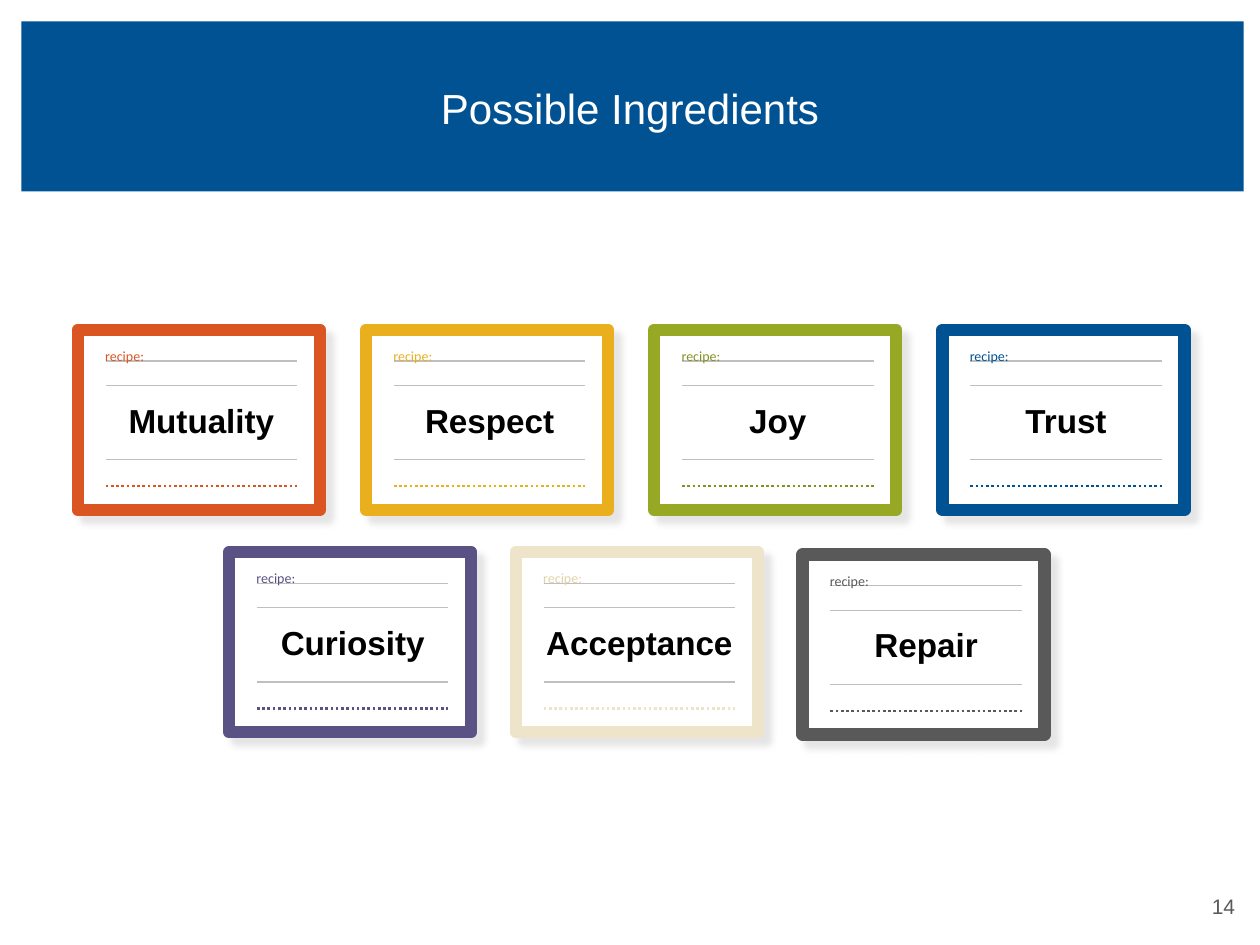
from pptx import Presentation, oxml
from pptx.dml.color import RGBColor
from pptx.enum import dml, shapes, text
from pptx.oxml import ns
from pptx.util import Cm, Pt

HUES = {
    "white": "FFFFFF", "black": "000000", "rule": "BFBFBF",
    "orange": "DA5521", "gold": "E9AF1D", "green": "97A825", "olive": "849120",
    "blue": "005293", "purple": "5A5284", "cream": "EDE4CA", "sand": "E2D3A9",
    "gray": "595959",
}
# Each entry: label, frame, dots, recipe ink, drop below the row.
ROWS = [
    (1.57, 6.65, 5.81, [
        ("Mutuality", "orange", "orange", "orange", 0),
        ("Respect", "gold", "gold", "gold", 0),
        ("Joy", "green", "olive", "olive", 0),
        ("Trust", "blue", "blue", "blue", 0),
    ]),
    (4.62, 11.13, 5.78, [
        ("Curiosity", "purple", "purple", "purple", 0),
        ("Acceptance", "cream", "cream", "sand", 0),
        ("Repair", "gray", "gray", "gray", 0.05),
    ]),
]
CARD_W, CARD_H = 4.88, 3.63
RULE_X, RULE_W = 0.56, 3.86


def hue(name):
    """Return the named colour."""
    return RGBColor.from_string(HUES[name])


def write(shape, words, size, tone, align, face="Arial", bold=False):
    """Set one styled paragraph in a shape."""
    para = shape.text_frame.paragraphs[0]
    para.text = words
    para.alignment = align
    font = para.font
    font.name, font.size, font.bold = face, Pt(size), bold
    font.color.rgb = hue(tone)


def add_box(parts, x, y, w, h, fill):
    """Add a plain filled rectangle."""
    box = parts.add_shape(shapes.MSO_SHAPE.RECTANGLE, Cm(x), Cm(y), Cm(w), Cm(h))
    box.fill.solid()
    box.fill.fore_color.rgb = hue(fill)
    box.line.fill.background()
    box.shadow.inherit = False
    return box


def add_text(parts, x, y, w, h, *style, **extra):
    """Add a wrapping text box."""
    box = parts.add_textbox(Cm(x), Cm(y), Cm(w), Cm(h))
    box.text_frame.word_wrap = True
    write(box, *style, **extra)
    return box


def add_rule(parts, x, y, tone, width=0.75, dash=None):
    """Add a level line across a card."""
    rule = parts.add_connector(
        shapes.MSO_CONNECTOR.STRAIGHT, Cm(x), Cm(y), Cm(x + RULE_W), Cm(y))
    rule.line.color.rgb = hue(tone)
    rule.line.width = Pt(width)
    rule.line.dash_style = dash
    rule._element.spPr.append(oxml.parse_xml(f"<a:effectLst {ns.nsdecls('a')}/>"))


def add_frame(parts, x, y, tone):
    """Add the bordered card with rounded joins and a soft shadow."""
    card = add_box(parts, x, y, CARD_W, CARD_H, "white")
    card.line.color.rgb = hue(tone)
    card.line.width = Pt(7)
    props = card._element.spPr
    props.find(ns.qn("a:ln")).append(oxml.parse_xml(f"<a:round {ns.nsdecls('a')}/>"))
    props.find(ns.qn("a:effectLst")).append(oxml.parse_xml(
        f'<a:outerShdw {ns.nsdecls("a")} blurRad="{Pt(4)}" dist="{Pt(6)}" '
        f'dir="2700000" algn="tl" rotWithShape="0"><a:srgbClr val="{HUES["black"]}">'
        '<a:alpha val="10000"/></a:srgbClr></a:outerShdw>'))


def add_card(parts, x, y, label, frame, dots, ink):
    """Add one recipe card at the given corner."""
    add_frame(parts, x, y, frame)
    group = parts.add_group_shape().shapes
    for drop in (0.63, 1.12, 2.62):
        add_rule(group, x + RULE_X, y + drop, "rule")
    add_rule(group, x + RULE_X, y + 3.15, dots, 1.5, dml.MSO_LINE.ROUND_DOT)
    add_text(group, x + 0.3, y + 0.23, 1.85, 0.61, "recipe:", 8, ink,
             text.PP_ALIGN.LEFT, face="Calibri")
    name = add_box(parts, x + RULE_X, y + 1.28, RULE_W, 1.07, "white")
    name.text_frame.word_wrap = False
    write(name, label, 19, "black", text.PP_ALIGN.CENTER, bold=True)


def add_head(parts, x, y, w, h, title):
    """Add the banner and its title."""
    add_box(parts, x, y, w, h, "blue")
    box = add_text(parts, x + 0.84, y + 0.33, w - 1.78, 2.84, title, 24, "white",
                   text.PP_ALIGN.CENTER)
    box.text_frame.vertical_anchor = text.MSO_ANCHOR.MIDDLE


def main():
    """Build and save the slide."""
    deck = Presentation()
    deck.slide_width, deck.slide_height = Cm(25.4), Cm(19.05)
    parts = deck.slides.add_slide(deck.slide_layouts[6]).shapes
    add_head(parts, 0.43, 0.43, 24.64, 3.43, "Possible Ingredients")
    for left, top, step, cards in ROWS:
        for i, (*style, drop) in enumerate(cards):
            add_card(parts, left + i * step, top + drop, *style)
    add_text(parts, 19.23, 17.88, 5.92, 0.81, "14", 12, "gray", text.PP_ALIGN.RIGHT)
    deck.save("out.pptx")


if __name__ == "__main__":
    main()
